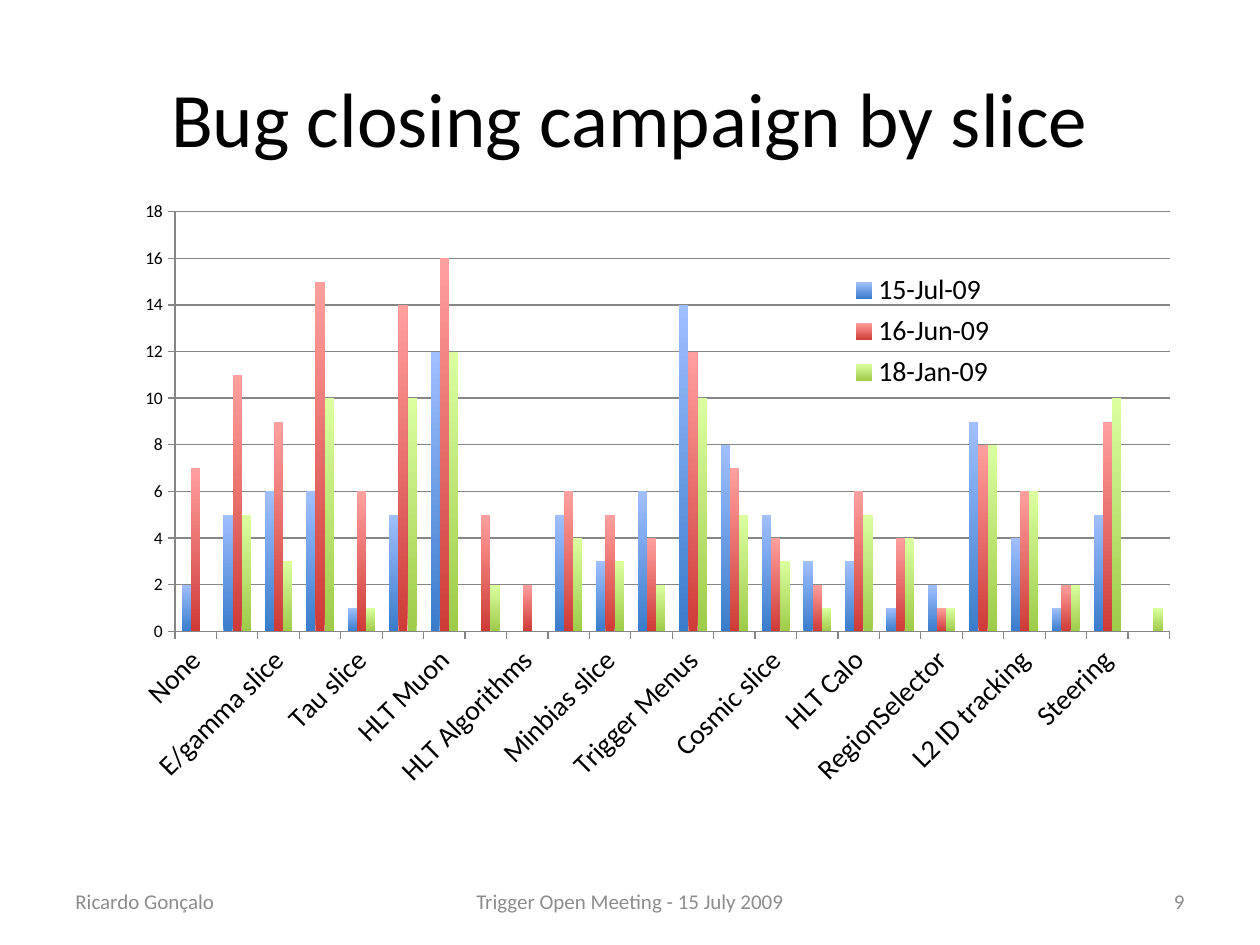
from dataclasses import dataclass

import pptx
import pptx.chart.data
import pptx.dml.color
import pptx.enum.chart
import pptx.enum.text
import pptx.oxml
import pptx.oxml.ns
import pptx.util
from pptx.util import Cm

FONT = "Calibri"
ALIGN = pptx.enum.text.PP_ALIGN
AXIS_GREY = "868686"


@dataclass
class Label:
    text: str
    left: float
    top: float
    width: float
    height: float
    size: int
    color: str
    align: ALIGN


@dataclass
class Campaign:
    date: str
    top_color: str
    bottom_color: str
    bugs: tuple[int, ...]


FOOTER_TOP, FOOTER_HEIGHT, GREY = 17.65, 1.02, "8C8C8C"
LABELS = [
    Label("Ricardo Gonçalo", 1.27, FOOTER_TOP, 5.92, FOOTER_HEIGHT, 12, GREY, ALIGN.LEFT),
    Label("Trigger Open Meeting - 15 July 2009", 8.68, FOOTER_TOP, 8.04, FOOTER_HEIGHT,
          12, GREY, ALIGN.CENTER),
    Label("9", 18.21, FOOTER_TOP, 5.92, FOOTER_HEIGHT, 12, GREY, ALIGN.RIGHT),
    Label("Bug closing campaign by slice", 1.27, 0.76, 22.86, 3.18, 44, "000000", ALIGN.CENTER),
]

SLICES = [
    "None", "Event Data", "E/gamma slice", "LVL1", "Tau slice", "Monitoring",
    "HLT Muon", "Offline", "HLT Algorithms", "EF ID tracking", "Minbias slice",
    "B Physics slice", "Trigger Menus", "TriggerConfig", "Cosmic slice",
    "ETmiss slice", "HLT Calo", "Jet slice", "RegionSelector", "Analysis",
    "L2 ID tracking", "General", "Steering", "Bjet slice",
]
CAMPAIGNS = [
    Campaign("15-Jul-09", "A0BFFF", "3A7CCB",
             (2, 5, 6, 6, 1, 5, 12, 0, 0, 5, 3, 6, 14, 8, 5, 3, 3, 1, 2, 9, 4, 1, 5, 0)),
    Campaign("16-Jun-09", "FFA09E", "CE3B37",
             (7, 11, 9, 15, 6, 14, 16, 5, 2, 6, 5, 4, 12, 7, 4, 2, 6, 4, 1, 8, 6, 2, 9, 0)),
    Campaign("18-Jan-09", "DBFFA0", "9ECB49",
             (0, 5, 3, 10, 1, 10, 12, 2, 0, 4, 3, 2, 10, 5, 3, 1, 5, 4, 1, 8, 6, 2, 10, 1)),
]


def rgb(color: str) -> pptx.dml.color.RGBColor:
    return pptx.dml.color.RGBColor.from_string(color)


def style_font(font, size: int, color: str = "000000") -> None:
    font.name = FONT
    font.size = pptx.util.Pt(size)
    font.bold = False
    font.color.rgb = rgb(color)


def style_line(line) -> None:
    line.color.rgb = rgb(AXIS_GREY)
    line.width = pptx.util.Pt(0.75)


def add_label(page, label: Label) -> None:
    box = page.shapes.add_textbox(Cm(label.left), Cm(label.top), Cm(label.width), Cm(label.height))
    frame = box.text_frame
    frame.word_wrap = True
    frame.vertical_anchor = pptx.enum.text.MSO_ANCHOR.MIDDLE
    para = frame.paragraphs[0]
    para.alignment = label.align
    span = para.add_run()
    span.text = label.text
    style_font(span.font, label.size, label.color)


def manual_layout(x: float, y: float, width: float, height: float, inner: bool = False):
    target = '<c:layoutTarget val="inner"/>' if inner else ""
    return pptx.oxml.parse_xml(
        f'<c:layout {pptx.oxml.ns.nsdecls("c")}><c:manualLayout>{target}'
        '<c:xMode val="edge"/><c:yMode val="edge"/>'
        f'<c:x val="{x}"/><c:y val="{y}"/><c:w val="{width}"/><c:h val="{height}"/>'
        "</c:manualLayout></c:layout>"
    )


def place(parent, layout, index: int) -> None:
    for old in parent.findall(pptx.oxml.ns.qn("c:layout")):
        parent.remove(old)
    parent.insert(index, layout)


def style_axis(axis, size: int) -> None:
    axis.major_tick_mark = pptx.enum.chart.XL_TICK_MARK.OUTSIDE
    axis.minor_tick_mark = pptx.enum.chart.XL_TICK_MARK.NONE
    style_font(axis.tick_labels.font, size)
    style_line(axis.format.line)


def add_bug_chart(page, campaigns: list[Campaign]) -> None:
    data = pptx.chart.data.CategoryChartData()
    data.categories = SLICES
    for campaign in campaigns:
        data.add_series(campaign.date, campaign.bugs)
    chart = page.shapes.add_chart(
        pptx.enum.chart.XL_CHART_TYPE.COLUMN_CLUSTERED,
        Cm(1.83), Cm(3.94), Cm(21.77), Cm(13.08), data,
    ).chart
    style_font(chart.font, 10)
    chart.has_title = False

    plot = chart.plots[0]
    plot.vary_by_categories = False
    plot.gap_width = 150
    plot.overlap = 0
    for series, campaign in zip(plot.series, campaigns):
        fill = series.format.fill
        fill.gradient()
        fill.gradient_angle = 90
        for stop, color in zip(fill.gradient_stops, (campaign.bottom_color, campaign.top_color)):
            stop.color.rgb = rgb(color)

    values = chart.value_axis
    style_axis(values, 10)
    values.minimum_scale, values.maximum_scale, values.major_unit = 0, 18, 2
    values.has_major_gridlines = True
    style_line(values.major_gridlines.format.line)

    slices = chart.category_axis
    style_axis(slices, 16)
    qn = pptx.oxml.ns.qn
    axis_xml = chart.element.find(".//" + qn("c:catAx"))
    axis_xml.find(".//" + qn("a:bodyPr")).set("rot", "-2700000")
    skip = pptx.oxml.parse_xml(f'<c:tickLblSkip {pptx.oxml.ns.nsdecls("c")} val="2"/>')
    axis_xml.find(qn("c:noMultiLvlLbl")).addprevious(skip)

    chart.has_legend = True
    legend = chart.legend
    legend.position = pptx.enum.chart.XL_LEGEND_POSITION.RIGHT
    legend.include_in_layout = False
    style_font(legend.font, 16)
    place(chart.element.find(".//" + qn("c:legend")), manual_layout(0.69, 0.11, 0.16, 0.2), 1)
    place(chart.element.find(".//" + qn("c:plotArea")),
          manual_layout(0.078, 0.025, 0.921, 0.647, inner=True), 0)


def main() -> None:
    deck = pptx.Presentation()
    deck.slide_width, deck.slide_height = Cm(25.4), Cm(19.05)
    page = deck.slides.add_slide(deck.slide_layouts[6])
    for label in LABELS:
        add_label(page, label)
    add_bug_chart(page, CAMPAIGNS)
    deck.save("out.pptx")


if __name__ == "__main__":
    main()
